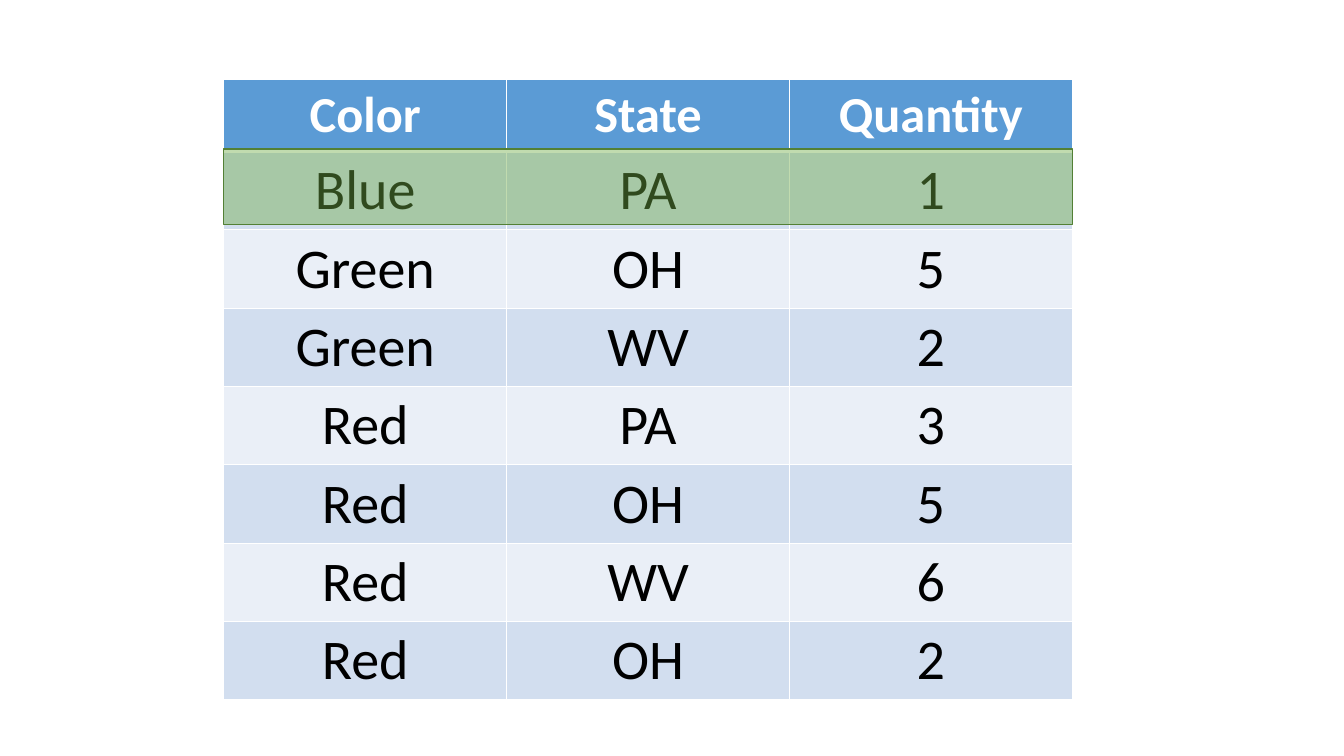
from lxml.etree import SubElement
from pptx import Presentation
from pptx.dml.color import RGBColor
from pptx.enum.shapes import MSO_SHAPE
from pptx.enum.text import MSO_ANCHOR, PP_ALIGN
from pptx.oxml.ns import qn
from pptx.util import Inches, Pt

COLORS = {
    "header": "5B9BD5",
    "dark_band": "D2DEEF",
    "light_band": "EAEFF7",
    "white": "FFFFFF",
    "black": "000000",
    "highlight": "70AD47",
    "highlight_line": "538035",
}
FONT = "Calibri"
LEFT, TOP = 2.22, 0.79
COLUMN_WIDTH, ROW_HEIGHT = 2.805, 0.68
HIGHLIGHT_TOP, HIGHLIGHT_HEIGHT, HIGHLIGHT_OPACITY = 1.48, 0.75, 43

COLUMNS = [
    ["Color", "Blue", "Green", "Green", "Red", "Red", "Red", "Red"],
    ["State", "PA", "OH", "WV", "PA", "OH", "WV", "OH"],
    ["Quantity", "1", "5", "2", "3", "5", "6", "2"],
]
HEADER_HEIGHTS = [0.68, 0.7, 0.63]


def rgb(name):
    return RGBColor.from_string(COLORS[name])


def set_borders(cell, row):
    """White cell lines, heavier between the header and the first data row."""
    properties = cell._tc.get_or_add_tcPr()
    widths = {"lnL": 1, "lnR": 1, "lnT": 3 if row == 1 else 1, "lnB": 3 if row == 0 else 1}
    for side, width in widths.items():
        line = SubElement(properties, qn(f"a:{side}"), w=str(Pt(width)))
        fill = SubElement(line, qn("a:solidFill"))
        SubElement(fill, qn("a:srgbClr"), val=COLORS["white"])


def format_cell(cell, text, row):
    is_header = row == 0
    set_borders(cell, row)
    cell.fill.solid()
    band = "dark_band" if row % 2 else "light_band"
    cell.fill.fore_color.rgb = rgb("header" if is_header else band)
    cell.vertical_anchor = MSO_ANCHOR.MIDDLE
    cell.text_frame.text = text
    para = cell.text_frame.paragraphs[0]
    para.alignment = PP_ALIGN.CENTER
    font = para.runs[0].font
    font.name = FONT
    font.size = Pt(36 if is_header else 40)
    font.bold = is_header
    font.color.rgb = rgb("white" if is_header else "black")


def add_column_table(slide, column, values, header_height):
    height = header_height + (len(values) - 1) * ROW_HEIGHT
    frame = slide.shapes.add_table(
        len(values), 1, Inches(LEFT + column * COLUMN_WIDTH), Inches(TOP),
        Inches(COLUMN_WIDTH), Inches(height))
    table = frame.table
    table.horz_banding = False
    for row, text in enumerate(values):
        table.rows[row].height = Inches(ROW_HEIGHT if row else header_height)
        format_cell(table.cell(row, 0), text, row)


def add_row_highlight(slide):
    box = slide.shapes.add_shape(
        MSO_SHAPE.RECTANGLE, Inches(LEFT), Inches(HIGHLIGHT_TOP),
        Inches(len(COLUMNS) * COLUMN_WIDTH), Inches(HIGHLIGHT_HEIGHT))
    box.shadow.inherit = False
    box.fill.solid()
    box.fill.fore_color.rgb = rgb("highlight")
    color = box._element.spPr.find(qn("a:solidFill")).find(qn("a:srgbClr"))
    SubElement(color, qn("a:alpha"), val=str(HIGHLIGHT_OPACITY * 1000))
    box.line.color.rgb = rgb("highlight_line")
    box.line.width = Pt(1)


def main():
    deck = Presentation()
    deck.slide_width, deck.slide_height = Inches(13.33), Inches(7.5)
    slide = deck.slides.add_slide(deck.slide_layouts[6])
    for column, (values, header_height) in enumerate(zip(COLUMNS, HEADER_HEIGHTS)):
        add_column_table(slide, column, values, header_height)
    add_row_highlight(slide)
    deck.save("out.pptx")


if __name__ == "__main__":
    main()
